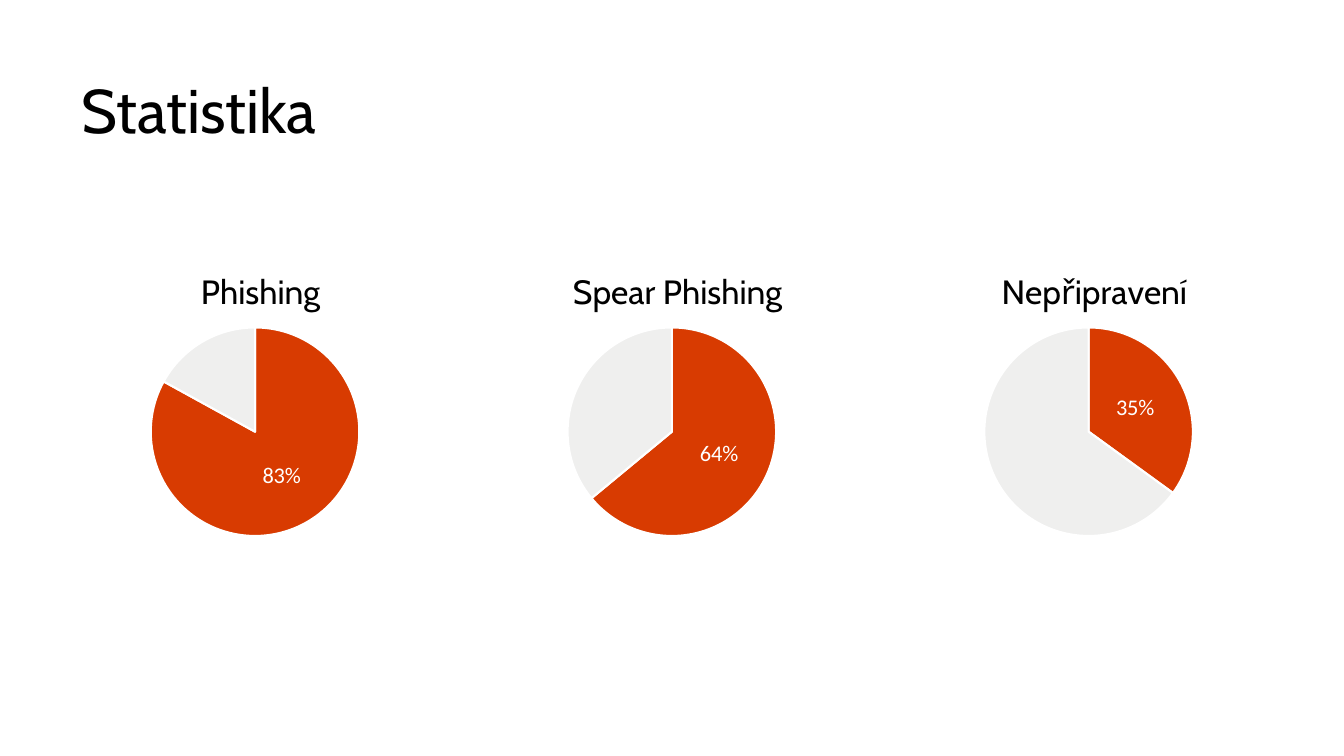
from dataclasses import dataclass

from lxml import etree
from pptx import Presentation
from pptx.chart.data import CategoryChartData
from pptx.dml.color import RGBColor
from pptx.enum.chart import XL_CHART_TYPE, XL_LABEL_POSITION
from pptx.enum.text import MSO_ANCHOR, PP_ALIGN
from pptx.oxml.ns import qn
from pptx.util import Pt

PIE = XL_CHART_TYPE.PIE
CENTER_LABEL = XL_LABEL_POSITION.CENTER
TOP = MSO_ANCHOR.TOP
LEFT = PP_ALIGN.LEFT
TITLE_ONLY = 5


@dataclass(frozen=True)
class Theme:
    ink: RGBColor = RGBColor(0x00, 0x00, 0x00)
    paper: RGBColor = RGBColor(0xFF, 0xFF, 0xFF)
    share: RGBColor = RGBColor(0xD8, 0x3B, 0x01)
    rest: RGBColor = RGBColor(0xEF, 0xEF, 0xEE)
    heading_font: str = "Cabin"
    body_font: str = "Calibri"
    title_size: int = 44
    chart_title_size: int = 24
    label_size: int = 16
    chart_size: int = 10


THEME = Theme()
PIES = [
    ("Phishing", 0.83, 86),
    ("Spear Phishing", 0.64, 150),
    ("Nepřipravení", 0.35, 133),
]
PIE_SIZE = 149
PIE_TOP = 62.5
CHART_TITLE_TOP = 16


def style_font(font, size, color, name):
    font.size = Pt(size)
    font.color.rgb = color
    font.name = name
    font.bold = False


def write_text(frame, text, size, color, name, align=None, line_spacing=None):
    para = frame.paragraphs[0]
    para.alignment = align
    para.line_spacing = line_spacing
    span = para.add_run()
    span.text = text
    style_font(span.font, size, color, name)


def set_layout(owner, **fractions):
    layout = owner.find(qn("c:layout"))
    if layout is None:
        layout = etree.Element(qn("c:layout"))
        text = owner.find(qn("c:tx"))
        owner.insert(0 if text is None else owner.index(text) + 1, layout)
    for child in list(layout):
        layout.remove(child)
    manual = etree.SubElement(layout, qn("c:manualLayout"))
    if "w" in fractions:
        etree.SubElement(manual, qn("c:layoutTarget"), val="inner")
    for axis in "xy":
        etree.SubElement(manual, qn(f"c:{axis}Mode"), val="edge")
    for key, value in fractions.items():
        etree.SubElement(manual, qn(f"c:{key}"), val=f"{value:.4f}")


def add_title(page, text, left, top, width, height):
    box = page.shapes.title
    box.left, box.top, box.width, box.height = Pt(left), Pt(top), Pt(width), Pt(height)
    frame = box.text_frame
    frame.word_wrap = True
    frame.vertical_anchor = TOP
    write_text(frame, text, THEME.title_size, THEME.ink, THEME.heading_font,
               align=LEFT, line_spacing=0.9)


def add_pie(page, name, share, name_width, left, top, width, height):
    data = CategoryChartData(number_format="0%")
    data.categories = ["1", "2"]
    data.add_series("Series 1", (share, round(1 - share, 2)))
    chart = page.shapes.add_chart(
        PIE, Pt(left), Pt(top), Pt(width), Pt(height), data).chart
    style_font(chart.font, THEME.chart_size, THEME.ink, THEME.body_font)
    chart.has_legend = False
    chart.has_title = True
    title = chart.chart_title
    title.include_in_layout = False
    write_text(title.text_frame, name, THEME.chart_title_size, THEME.ink,
               THEME.heading_font)
    set_layout(title.format.fill and title._element,
               x=(width - name_width) / 2 / width, y=CHART_TITLE_TOP / height)

    plot = chart.plots[0]
    plot.vary_by_categories = True
    series = plot.series[0]
    for index, color in enumerate((THEME.share, THEME.rest)):
        slice_format = series.points[index].format
        slice_format.fill.solid()
        slice_format.fill.fore_color.rgb = color
        slice_format.line.color.rgb = THEME.paper
        slice_format.line.width = Pt(1.5)
    series.data_labels.show_value = False
    label = series.points[0].data_label
    style_font(label.font, THEME.label_size, THEME.paper, THEME.body_font)
    label.position = CENTER_LABEL
    plot_area = chart.element.find(".//" + qn("c:plotArea"))
    set_layout(plot_area, x=(width - PIE_SIZE) / 2 / width, y=PIE_TOP / height,
               w=PIE_SIZE / width, h=PIE_SIZE / height)


def add_pie_row(page, left, top, width, height, pie_width):
    step = (width - pie_width) / (len(PIES) - 1)
    for index, (name, share, name_width) in enumerate(PIES):
        add_pie(page, name, share, name_width,
                left + index * step, top, pie_width, height)


def main():
    deck = Presentation()
    deck.slide_width, deck.slide_height = Pt(960), Pt(540)
    page = deck.slides.add_slide(deck.slide_layouts[TITLE_ONLY])
    page.background.fill.solid()
    page.background.fill.fore_color.rgb = THEME.paper
    add_title(page, "Statistika", 51, 54, 828, 104.4)
    add_pie_row(page, 49.7, 171.4, 860.4, 221.8, 265)
    deck.save("out.pptx")


if __name__ == "__main__":
    main()
